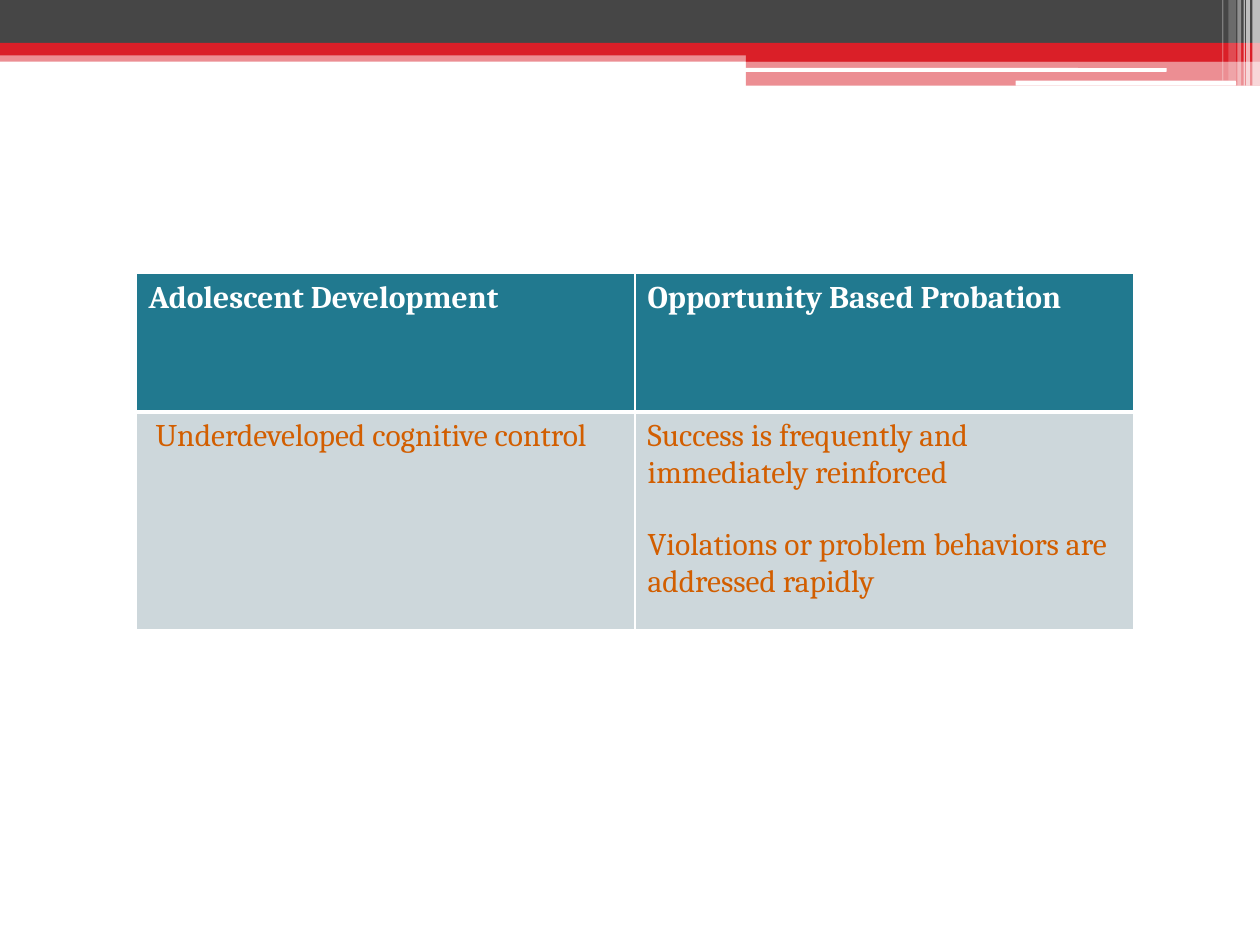
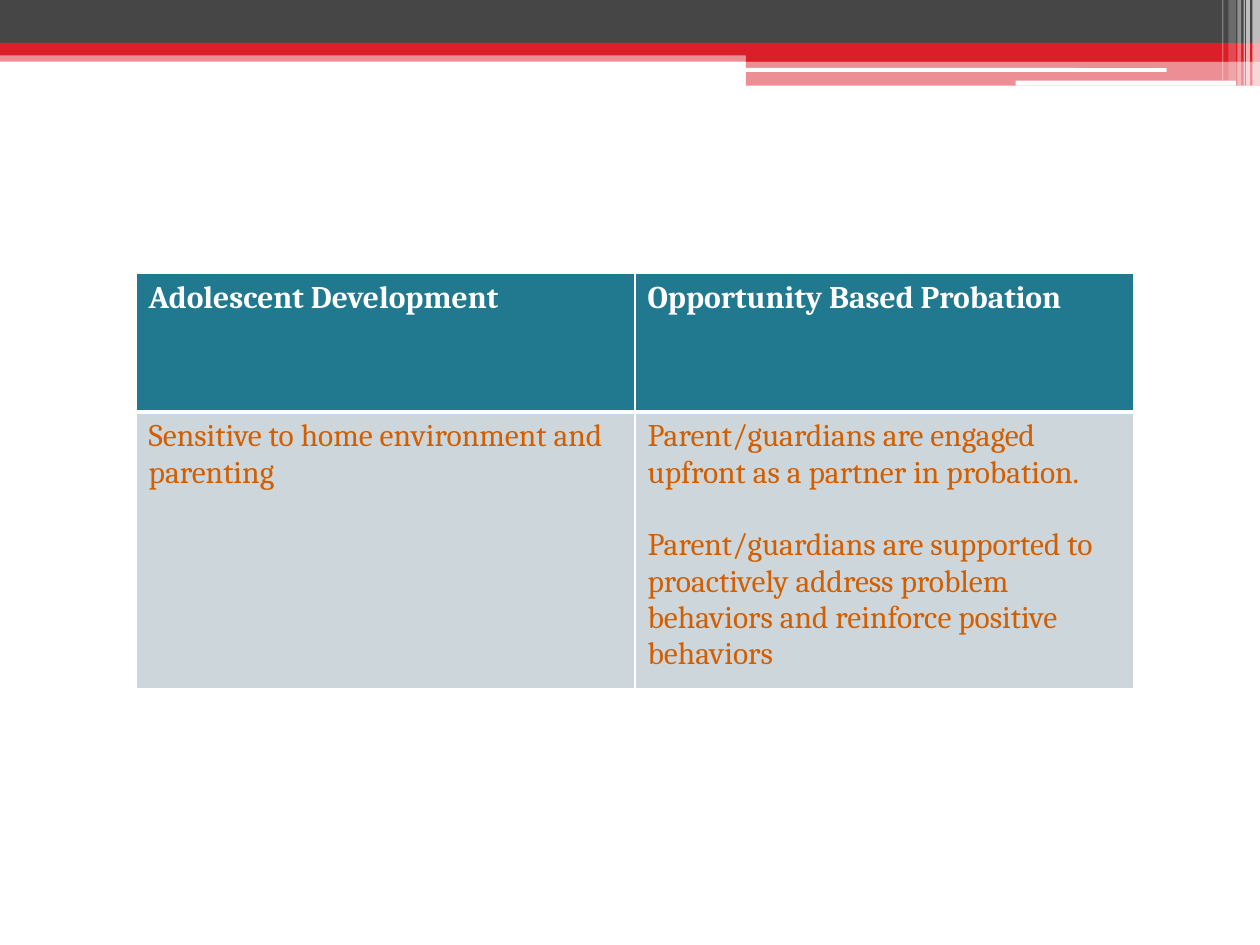
"""Build two slides pairing adolescent development with opportunity based probation."""
from lxml import etree
from pptx import Presentation
from pptx import util as u
from pptx.dml.color import RGBColor
from pptx.enum import shapes
from pptx.oxml.ns import qn

WHITE = RGBColor(0xFF, 0xFF, 0xFF)
GREY = RGBColor(0x46, 0x46, 0x46)
RED = RGBColor(0xDA, 0x1F, 0x28)
TEAL = RGBColor(0x21, 0x79, 0x8F)
PALE = RGBColor(0xCD, 0xD7, 0xDB)
ORANGE = RGBColor(0xD2, 0x5E, 0x00)
FONT, SIZE, PARA_GAP = "Cambria", 18, 20.8

HEADINGS = ["Adolescent Development", "Opportunity Based Probation"]
SLIDES = [
    {"body_height": 1.73,
     "body": [[" Underdeveloped cognitive control"],
              ["Success is frequently and immediately reinforced",
               "Violations or problem behaviors are addressed rapidly"]]},
    {"body_height": 2.2,
     "body": [["Sensitive to home environment and parenting"],
              ["Parent/guardians are engaged upfront as a partner in probation.",
               "Parent/guardians are supported to proactively address problem "
               "behaviors and reinforce positive behaviors"]]},
]

WIDTH, HEIGHT = 10, 7.5
SPLIT = 5.92
BANDS = [
    (0, 0.4, WIDTH, 0.09, RED, 50),
    (0, 0, WIDTH, 0.34, GREY, 100),
    (0, 0.34, WIDTH, 0.1, RED, 100),
    (SPLIT, 0.39, WIDTH - SPLIT, 0.1, RED, 100),
    (SPLIT, 0.48, WIDTH - SPLIT, 0.2, RED, 50),
]
PILLS = [(5.91, 0.54, 3.35, 0.03), (8.06, 0.64, 1.75, 0.04)]
STRIPES = [
    (9.94, 0.06, 0.68, 65), (9.89, 0.03, 0.68, 65), (9.87, 0.01, 0.68, 60),
    (9.82, 0.03, 0.68, 40), (9.75, 0.06, 0.64, 20), (9.7, 0.01, 0.64, 30),
]
TABLE_LEFT, TABLE_TOP, COL_WIDTH, HEAD_HEIGHT = 1.08, 2.17, 3.96, 1.1


def add_block(s, box, color, opacity=100, kind=shapes.MSO_SHAPE.RECTANGLE):
    sp = s.shapes.add_shape(kind, *map(u.Inches, box))
    sp.shadow.inherit = False
    sp.line.fill.background()
    sp.fill.solid()
    sp.fill.fore_color.rgb = color
    if opacity < 100:
        clr = sp.fill._xPr.find(".//" + qn("a:srgbClr"))
        etree.SubElement(clr, qn("a:alpha"), val=str(opacity * 1000))


def add_header_band(s):
    for *box, color, opacity in BANDS:
        add_block(s, box, color, opacity)
    for box in PILLS:
        add_block(s, box, WHITE, kind=shapes.MSO_SHAPE.ROUNDED_RECTANGLE)
    for left, width, height, opacity in STRIPES:
        add_block(s, (left, 0, width, height), WHITE, opacity)


def set_borders(cell, widths):
    tc_pr = cell._tc.get_or_add_tcPr()
    for i, (side, width) in enumerate(widths.items()):
        ln = etree.Element(qn("a:ln" + side), w=str(u.Pt(width)))
        fill = etree.SubElement(ln, qn("a:solidFill"))
        etree.SubElement(fill, qn("a:srgbClr"), val=str(WHITE))
        tc_pr.insert(i, ln)


def fill_cell(cell, paragraphs, fill, color, bold, borders):
    cell.fill.solid()
    cell.fill.fore_color.rgb = fill
    set_borders(cell, borders)
    tf = cell.text_frame
    tf.text = "\n".join(paragraphs)
    for i, p in enumerate(tf.paragraphs):
        p.space_before = u.Pt(PARA_GAP if i else 0)
        for r in p.runs:
            r.font.name, r.font.size, r.font.bold = FONT, u.Pt(SIZE), bold
            r.font.color.rgb = color


def add_comparison(s, body, body_height):
    heights = [HEAD_HEIGHT, body_height]
    box = (TABLE_LEFT, TABLE_TOP, COL_WIDTH * len(HEADINGS), sum(heights))
    table = s.shapes.add_table(len(heights), len(HEADINGS), *map(u.Inches, box)).table
    for row, height in zip(table.rows, heights):
        row.height = u.Inches(height)
    for i, (heading, paragraphs) in enumerate(zip(HEADINGS, body)):
        table.columns[i].width = u.Inches(COL_WIDTH)
        fill_cell(table.cell(0, i), [heading], TEAL, WHITE, True,
                  {"L": 1, "R": 1, "T": 1, "B": 3})
        fill_cell(table.cell(1, i), paragraphs, PALE, ORANGE, False,
                  {"L": 1, "R": 1, "T": 3, "B": 1})


def main():
    prs = Presentation()
    prs.slide_width, prs.slide_height = u.Inches(WIDTH), u.Inches(HEIGHT)
    for content in SLIDES:
        s = prs.slides.add_slide(prs.slide_layouts[6])
        add_header_band(s)
        add_comparison(s, **content)
    prs.save("out.pptx")


if __name__ == "__main__":
    main()
